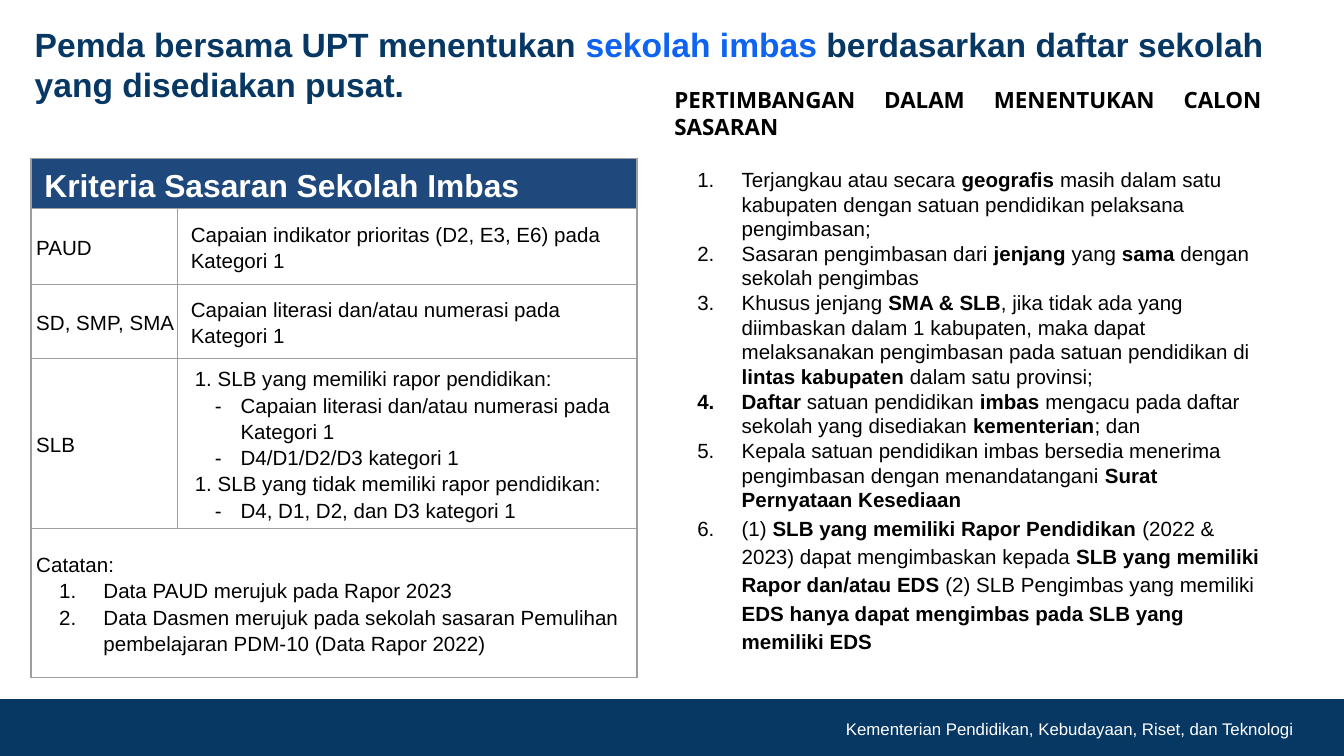
from dataclasses import dataclass
from typing import Optional

from lxml.etree import SubElement as Sub
from pptx import Presentation as Deck
from pptx.dml.color import RGBColor as Color
from pptx.enum.shapes import MSO_SHAPE as Shape
from pptx.enum.text import MSO_ANCHOR as Anchor, PP_ALIGN as Align
from pptx.oxml.ns import qn
from pptx.util import Inches, Pt

NAVY = Color(0x07, 0x37, 0x63)
BLUE = Color(0x0E, 0x63, 0xF0)
HEAD = Color(0x1F, 0x48, 0x7C)
GRAY = Color(0x9E, 0x9E, 0x9E)
WHITE = Color(255, 255, 255)
BLACK = Color(0, 0, 0)


@dataclass
class Para:
    text: str
    mark: str = ""
    left: float = 0
    hang: float = 0
    size: float = 11
    color: Color = BLACK
    font: str = "Arial"
    space: Optional[float] = None
    after: float = 0
    align: Optional[Align] = None


@dataclass
class Cell:
    row: int
    col: int
    paras: list[Para]
    pad: float = 0.1
    fill: Color = WHITE
    wide: bool = False


def item(text: str, space: Optional[float] = None) -> Para:
    return Para(text, "1.", 0.5, 0.33, space=space)


def point(text: str) -> Para:
    return Para(text, "1.", 0.2, 0.17, space=1.15)


def dash(text: str) -> Para:
    return Para(text, "-", 0.37, 0.19, space=1.15)


def plain(text: str) -> Para:
    return Para(text, space=1.15)


def set_mark(line, para: Para) -> None:
    props = line._p.get_or_add_pPr()
    props.set("marL", str(Inches(para.left)))
    props.set("indent", str(-Inches(para.hang)))
    tint = Sub(props, qn("a:buClr"))
    Sub(tint, qn("a:srgbClr"), val=str(BLACK))
    Sub(props, qn("a:buFont"), typeface="Arial")
    if para.mark == "-":
        Sub(props, qn("a:buChar"), char="-")
    else:
        Sub(props, qn("a:buAutoNum"), type="arabicPeriod")


def write(frame, paras: list[Para]) -> None:
    for num, para in enumerate(paras):
        line = frame.add_paragraph() if num else frame.paragraphs[0]
        line.alignment = para.align
        line.line_spacing = para.space
        line.space_after = Pt(para.after)
        if para.mark:
            set_mark(line, para)
        for part, text in enumerate(para.text.split("*")):
            if text:
                run = line.add_run()
                run.text = text
                run.font.name = para.font
                run.font.size = Pt(para.size)
                run.font.bold = part % 2 == 1
                run.font.color.rgb = para.color


def add_text(slide, spot: tuple, paras: list[Para], pad: float = 0.1,
             anchor: Anchor = Anchor.TOP):
    frame = slide.shapes.add_textbox(*map(Inches, spot)).text_frame
    frame.word_wrap = True
    frame.vertical_anchor = anchor
    frame.margin_left = frame.margin_right = Inches(pad)
    frame.margin_top = frame.margin_bottom = Inches(pad)
    write(frame, paras)
    return frame


def add_edge(cell) -> None:
    props = cell._tc.get_or_add_tcPr()
    for side in ("lnL", "lnR", "lnT", "lnB"):
        edge = Sub(props, qn(f"a:{side}"), w=str(Pt(0.75)))
        fill = Sub(edge, qn("a:solidFill"))
        Sub(fill, qn("a:srgbClr"), val=str(GRAY))


def add_grid(slide, spot: tuple, cols: list[float], rows: list[float],
             cells: list[Cell]) -> None:
    grid = slide.shapes.add_table(len(rows), len(cols), *map(Inches, spot)).table
    grid.first_row = grid.horz_banding = False
    for col, width in zip(grid.columns, cols):
        col.width = Inches(width)
    for row, height in zip(grid.rows, rows):
        row.height = Inches(height)
    for cell in grid.iter_cells():
        cell.margin_top = cell.margin_bottom = 0
        add_edge(cell)
        cell.fill.solid()
        cell.fill.fore_color.rgb = WHITE
    for data in cells:
        cell = grid.cell(data.row, data.col)
        if data.wide:
            cell.merge(grid.cell(data.row, len(cols) - 1))
        cell.margin_left = Inches(data.pad)
        cell.margin_right = Inches(0.1 if data.pad == 0.1 else 0)
        cell.vertical_anchor = Anchor.MIDDLE
        cell.fill.fore_color.rgb = data.fill
        write(cell.text_frame, data.paras)


RULES = [
    Para("*PERTIMBANGAN DALAM MENENTUKAN CALON SASARAN*", size=12,
         font="Open Sans", after=14.5, align=Align.JUSTIFY),
    item("Terjangkau atau secara *geografis *masih dalam satu kabupaten "
         "dengan satuan pendidikan pelaksana pengimbasan;"),
    item("Sasaran pengimbasan dari *jenjang *yang *sama *dengan sekolah pengimbas"),
    item("Khusus jenjang *SMA & SLB*, jika tidak ada yang diimbaskan dalam 1 "
         "kabupaten, maka dapat melaksanakan pengimbasan pada satuan "
         "pendidikan di *lintas kabupaten *dalam satu provinsi;"),
    item("*Daftar *satuan pendidikan *imbas *mengacu pada daftar sekolah "
         "yang disediakan *kementerian*; dan"),
    item("Kepala satuan pendidikan imbas bersedia menerima pengimbasan "
         "dengan menandatangani *Surat Pernyataan Kesediaan*"),
    item("(1) *SLB yang memiliki Rapor Pendidikan *(2022 & 2023) dapat "
         "mengimbaskan kepada *SLB yang memiliki Rapor dan/atau EDS* (2) SLB "
         "Pengimbas yang memiliki *EDS hanya dapat mengimbas pada SLB yang "
         "memiliki EDS*", 1.15),
]

CELLS = [
    Cell(0, 0, [Para("*Kriteria Sasaran Sekolah Imbas*", size=17, color=WHITE,
                     space=1.15)], fill=HEAD, wide=True),
    Cell(1, 0, [plain("PAUD")], 0.04),
    Cell(1, 1, [plain("Capaian indikator prioritas (D2, E3, E6) pada Kategori 1")]),
    Cell(2, 0, [plain("SD, SMP, SMA")], 0.04),
    Cell(2, 1, [plain("Capaian literasi dan/atau numerasi pada Kategori 1")]),
    Cell(3, 0, [plain("SLB")], 0.04),
    Cell(3, 1, [
        point("SLB yang memiliki rapor pendidikan:"),
        dash("Capaian literasi dan/atau numerasi pada Kategori 1"),
        dash("D4/D1/D2/D3 kategori 1"),
        point("SLB yang tidak memiliki rapor pendidikan:"),
        dash("D4, D1, D2, dan D3 kategori 1"),
    ]),
    Cell(4, 0, [
        plain("Catatan:"),
        item("Data PAUD merujuk pada Rapor 2023", 1.15),
        item("Data Dasmen merujuk pada sekolah sasaran Pemulihan "
             "pembelajaran PDM-10 (Data Rapor 2022)", 1.15),
    ], 0.04, wide=True),
]


def main() -> None:
    deck = Deck()
    deck.slide_width = Inches(10)
    deck.slide_height = Inches(10 * 9 / 16)
    slide = deck.slides.add_slide(deck.slide_layouts[6])

    band = slide.shapes.add_shape(Shape.RECTANGLE, *map(Inches, (0, 5.21, 10, 0.41)))
    band.shadow.inherit = False
    band.fill.solid()
    band.fill.fore_color.rgb = band.line.color.rgb = NAVY
    band.line.width = Pt(1)
    add_text(slide, (5.76, 5.32, 3.89, 0.21), [
        Para("Kementerian Pendidikan, Kebudayaan, Riset, dan Teknologi",
             size=9, color=WHITE, align=Align.RIGHT)], 0.03)

    add_text(slide, (4.92, 0.54, 4.57, 4.44), RULES)
    add_grid(slide, (0.23, 1.18, 4.51, 3.32), [1.09, 3.42],
             [0.37, 0.57, 0.55, 0.72, 1.11], CELLS)
    title = add_text(slide, (0.16, 0.27, 9.69, 0.41), [
        Para("*Pemda bersama UPT menentukan **sekolah imbas** berdasarkan "
             "daftar sekolah yang disediakan pusat.*", size=18, color=NAVY)],
        anchor=Anchor.MIDDLE)
    title.paragraphs[0].runs[1].font.color.rgb = BLUE
    deck.save("out.pptx")


if __name__ == "__main__":
    main()
